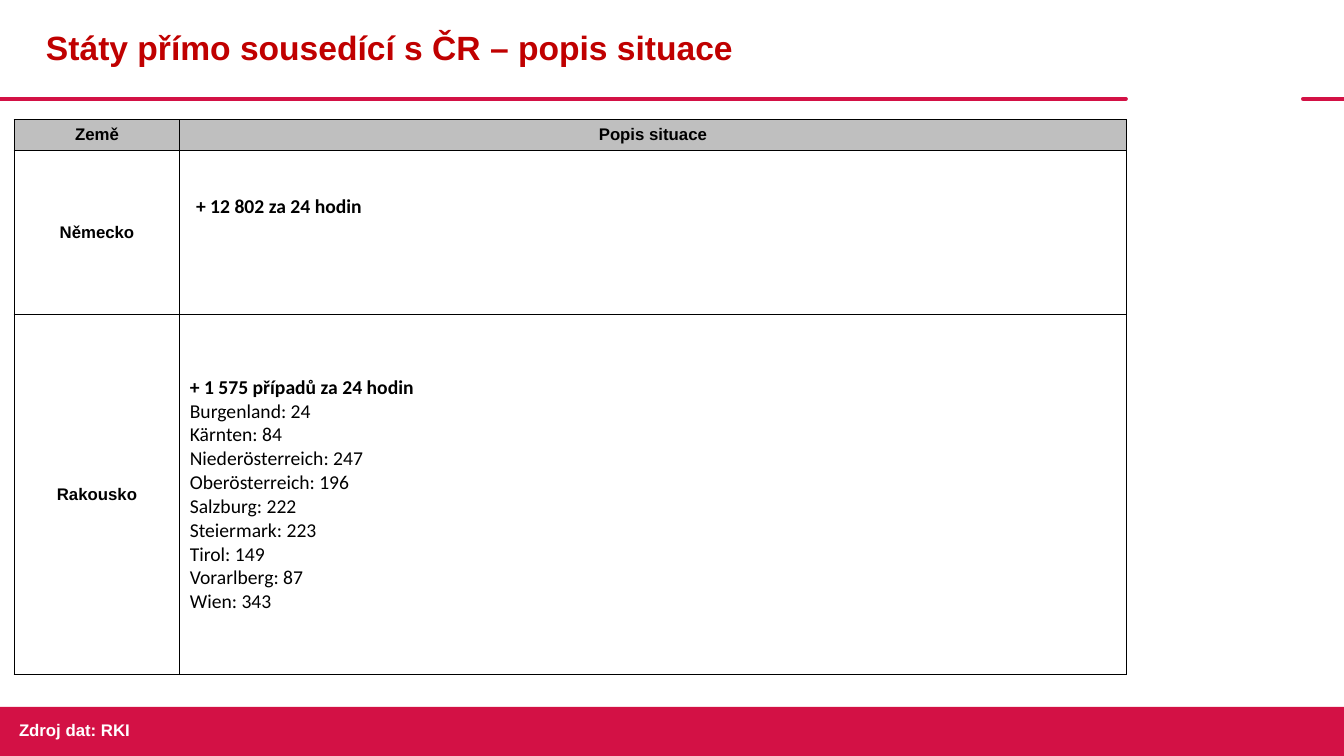
from lxml import etree
from pptx import Presentation
from pptx.dml.color import RGBColor
from pptx.enum.shapes import MSO_CONNECTOR, MSO_SHAPE
from pptx.enum.text import MSO_ANCHOR, PP_ALIGN
from pptx.oxml.ns import qn
from pptx.util import Cm, Pt

STRAIGHT = MSO_CONNECTOR.STRAIGHT
RECTANGLE = MSO_SHAPE.RECTANGLE
MIDDLE = MSO_ANCHOR.MIDDLE
LEFT, CENTER, JUSTIFY = PP_ALIGN.LEFT, PP_ALIGN.CENTER, PP_ALIGN.JUSTIFY

SLIDE_WIDTH, SLIDE_HEIGHT = 33.87, 19.05
CRIMSON, RED, GRAY = "D31145", "C00000", "BFBFBF"
BLACK, WHITE = "000000", "FFFFFF"

COLUMN_WIDTHS = (4.17, 23.85)
ROW_HEIGHTS = (0.73, 4.15, 9.07)
GERMANY_TOTAL = "+ 12 802 za 24 hodin"
AUSTRIA_TOTAL = "+ 1 575 případů za 24 hodin"
AUSTRIA_STATES = (
    ("Burgenland", 24), ("Kärnten", 84), ("Niederösterreich", 247),
    ("Oberösterreich", 196), ("Salzburg", 222), ("Steiermark", 223),
    ("Tirol", 149), ("Vorarlberg", 87), ("Wien", 343),
)


def color(value):
    return RGBColor.from_string(value)


def add_run(paragraph, text, size=12, font="Arial", value=BLACK, bold=True):
    run = paragraph.add_run()
    run.text = text
    run.font.size = Pt(size)
    run.font.name = font
    run.font.bold = bold
    run.font.color.rgb = color(value)


def add_text_box(slide, left, top, width, height):
    frame = slide.shapes.add_textbox(Cm(left), Cm(top), Cm(width), Cm(height)).text_frame
    frame.word_wrap = True
    return frame


def add_rule(slide, left, right, top):
    rule = slide.shapes.add_connector(STRAIGHT, Cm(left), Cm(top), Cm(right), Cm(top))
    rule.line.color.rgb = color(CRIMSON)
    rule.line.width = Pt(3)
    rule.line._get_or_add_ln().set("cap", "rnd")
    etree.SubElement(rule._element.spPr, qn("a:effectLst"))


def add_header(slide, height):
    add_rule(slide, 0, 28.37, height)
    add_rule(slide, 32.84, SLIDE_WIDTH, height)
    frame = add_text_box(slide, 0.91, 0, 27.46, height)
    frame.vertical_anchor = MIDDLE
    paragraph = frame.paragraphs[0]
    paragraph.line_spacing = 0.9
    add_run(paragraph, "Státy přímo sousedící s ČR – popis situace", 24, value=RED)


def add_footer(slide, top):
    band = slide.shapes.add_shape(
        RECTANGLE, 0, Cm(top), Cm(SLIDE_WIDTH), Cm(SLIDE_HEIGHT - top))
    band.shadow.inherit = False
    band.fill.solid()
    band.fill.fore_color.rgb = color(CRIMSON)
    band.line.fill.background()
    frame = add_text_box(slide, 0.23, top + 0.2, 21.49, 0.77)
    add_run(frame.paragraphs[0], "Zdroj dat: RKI", value=WHITE)


def style_cell(cell, fill=None):
    """Set the fill, the middle anchor and thin black borders."""
    cell.vertical_anchor = MIDDLE
    properties = cell._tc.get_or_add_tcPr()
    for side in ("a:lnL", "a:lnR", "a:lnT", "a:lnB"):
        border = etree.SubElement(properties, qn(side), w=str(Pt(1)))
        solid = etree.SubElement(border, qn("a:solidFill"))
        etree.SubElement(solid, qn("a:srgbClr"), val=BLACK)
    if fill:
        cell.fill.solid()
        cell.fill.fore_color.rgb = color(fill)
    else:
        cell.fill.background()


def add_label(cell, text):
    paragraph = cell.text_frame.paragraphs[0]
    paragraph.alignment = CENTER
    add_run(paragraph, text)


def fill_germany(cell):
    cell.margin_left, cell.margin_bottom = Cm(0.41), Cm(1.25)
    paragraph = cell.text_frame.paragraphs[0]
    paragraph.alignment = JUSTIFY
    paragraph.line_spacing = Pt(12)
    paragraph.space_after = Pt(6)
    add_run(paragraph, GERMANY_TOTAL, 14, "Calibri")


def fill_austria(cell):
    frame = cell.text_frame
    add_run(frame.paragraphs[0], AUSTRIA_TOTAL, 14, "Calibri")
    for state, cases in AUSTRIA_STATES:
        add_run(frame.add_paragraph(), f"{state}: {cases}", 14, "Calibri", bold=False)
    for paragraph in frame.paragraphs:
        paragraph.alignment = LEFT


def add_situation_table(slide, left, top):
    table = slide.shapes.add_table(
        len(ROW_HEIGHTS), len(COLUMN_WIDTHS), Cm(left), Cm(top),
        Cm(sum(COLUMN_WIDTHS)), Cm(sum(ROW_HEIGHTS))).table
    table.horz_banding = False
    table.first_row = False
    for column, width in zip(table.columns, COLUMN_WIDTHS):
        column.width = Cm(width)
    for index, (row, height) in enumerate(zip(table.rows, ROW_HEIGHTS)):
        row.height = Cm(height)
        for cell in row.cells:
            style_cell(cell, GRAY if index == 0 else None)
    for index, label in enumerate(("Země", "Německo", "Rakousko")):
        add_label(table.cell(index, 0), label)
    add_label(table.cell(0, 1), "Popis situace")
    fill_germany(table.cell(1, 1))
    fill_austria(table.cell(2, 1))


def main():
    presentation = Presentation()
    presentation.slide_width = Cm(SLIDE_WIDTH)
    presentation.slide_height = Cm(SLIDE_HEIGHT)
    slide = presentation.slides.add_slide(presentation.slide_layouts[6])
    add_header(slide, 2.49)
    add_situation_table(slide, 0.36, 3.02)
    add_footer(slide, 17.81)
    presentation.save("out.pptx")


if __name__ == "__main__":
    main()
